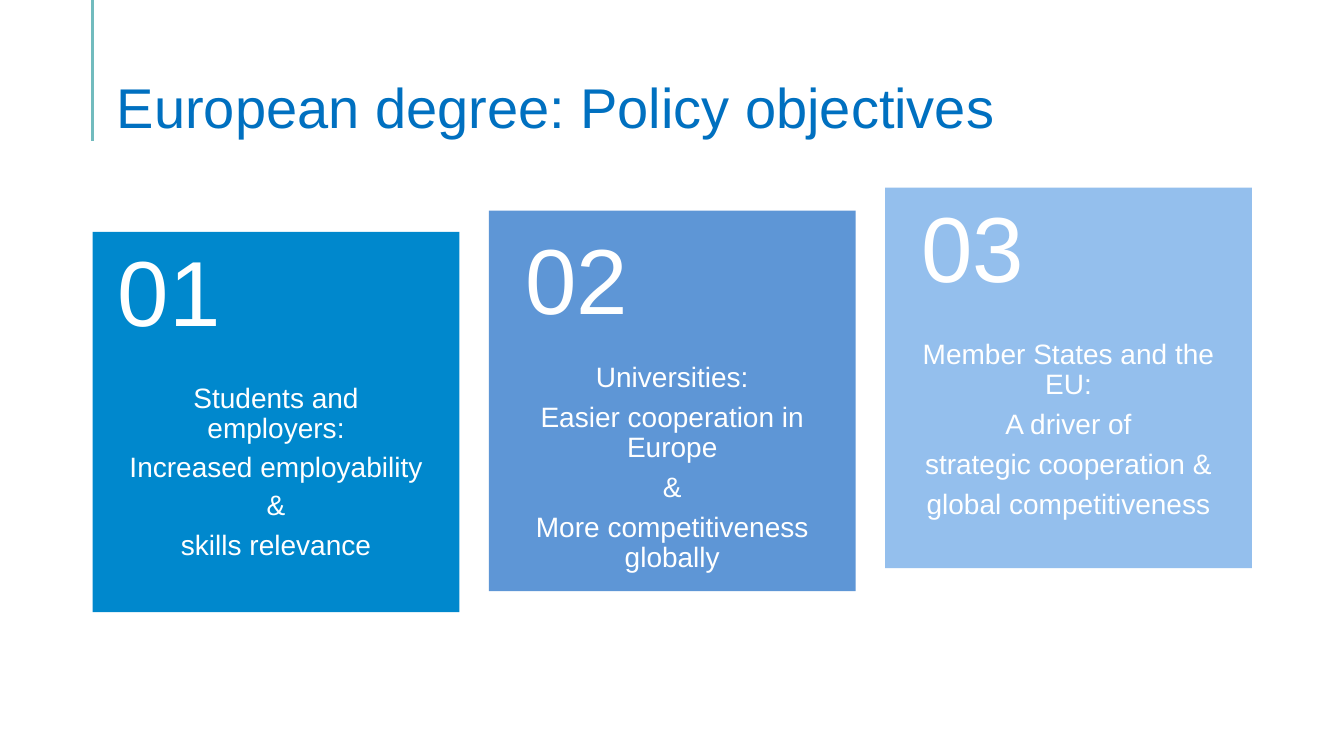
import pptx
import pptx.util
import pptx.dml.color
import pptx.enum.shapes
import pptx.enum.text
from dataclasses import dataclass
from lxml import etree

Pt = pptx.util.Pt
RGB = pptx.dml.color.RGBColor.from_string
Align = pptx.enum.text.PP_ALIGN
Anchor = pptx.enum.text.MSO_ANCHOR


@dataclass(frozen=True)
class Theme:
    face: str = "Arial"
    title: str = "0070C0"
    rule: str = "71BBBE"
    text: str = "FFFFFF"
    cards: tuple = ("0088CD", "5E96D6", "94BFED")
    head: int = 40
    body: int = 20
    digit: int = 66


class Deck:
    def __init__(self, theme):
        self.theme = theme
        self.file = pptx.Presentation()
        self.file.slide_width, self.file.slide_height = Pt(960), Pt(540)
        self.slide = self.file.slides.add_slide(self.file.slide_layouts[5])

    def label(self, shape, lines, size, color, inset, anchor, align, gaps=None):
        frame = shape.text_frame
        left, top, right, base = (Pt(n) for n in inset)
        form = {"word_wrap": True, "auto_size": pptx.enum.text.MSO_AUTO_SIZE.NONE,
                "vertical_anchor": anchor, "margin_left": left, "margin_top": top,
                "margin_right": right, "margin_bottom": base}
        for key, value in form.items():
            setattr(frame, key, value)
        frame.text = "\n".join(lines)
        for para, gap in zip(frame.paragraphs, gaps or [0] * len(lines)):
            form = {"alignment": align, "line_spacing": 0.9,
                    "space_before": Pt(0), "space_after": Pt(gap)}
            for key, value in form.items():
                setattr(para, key, value)
            para.font.name, para.font.size = self.theme.face, Pt(size)
            para.font.color.rgb = RGB(color)

    def title(self, text, *box):
        shape = self.slide.shapes.title
        for key, value in zip(("left", "top", "width", "height"), box):
            setattr(shape, key, Pt(value))
        self.label(shape, [text], self.theme.head, self.theme.title,
                   (7.2, 3.6, 7.2, 0), Anchor.BOTTOM, Align.LEFT)

    def rule(self, *ends):
        line = self.slide.shapes.add_connector(
            pptx.enum.shapes.MSO_CONNECTOR.STRAIGHT, *(Pt(n) for n in ends))
        line.line.color.rgb, line.line.width = RGB(self.theme.rule), Pt(2.25)
        props = line._element.spPr
        etree.SubElement(props, pptx.oxml.ns.qn("a:effectLst"))

    def card(self, lines, gaps, fill, *box):
        shape = self.slide.shapes.add_shape(
            pptx.enum.shapes.MSO_SHAPE.RECTANGLE, *(Pt(n) for n in box))
        shape.shadow.inherit = False
        shape.fill.solid()
        shape.fill.fore_color.rgb = RGB(fill)
        shape.line.fill.background()
        self.label(shape, lines, self.theme.body, self.theme.text,
                   (25.9, 108.7, 25.9, 25.9), Anchor.TOP, Align.CENTER, gaps)

    def digit(self, text, *box):
        shape = self.slide.shapes.add_textbox(*(Pt(n) for n in box))
        self.label(shape, [text], self.theme.digit, self.theme.text,
                   (25.9, 13, 25.9, 13), Anchor.MIDDLE, Align.LEFT)


def main():
    theme = Theme()
    deck = Deck(theme)

    # Heading with its rule
    deck.rule(66.2, 0, 66.2, 100.8)
    deck.title("European degree: Policy objectives", 76.3, 38.2, 828, 61.9)

    # Rising cards: top, number left and top, gaps after lines, lines
    left, step, width, tall = 66.2, 283, 262, 271.7
    cards = [
        (165.6, 58.3, 150.5, (6, 6, 7, 7),
         ["Students and employers:", "Increased employability", "&",
          "skills relevance"]),
        (150.5, 349.2, 141.8, (7,) * 4,
         ["Universities:", "Easier cooperation in Europe", "&",
          "More competitiveness globally"]),
        (134.1, 632.2, 119.5, (7,) * 4,
         ["Member States and the EU:", "A driver of",
          "strategic cooperation &", "global competitiveness"]),
    ]
    for i, (top, x, y, gaps, lines) in enumerate(cards):
        deck.card(lines, gaps, theme.cards[i], left + i * step, top, width, tall)
        deck.digit(f"{i + 1:02}", x, y, width, 122.4)

    deck.file.save("out.pptx")


if __name__ == "__main__":
    main()
